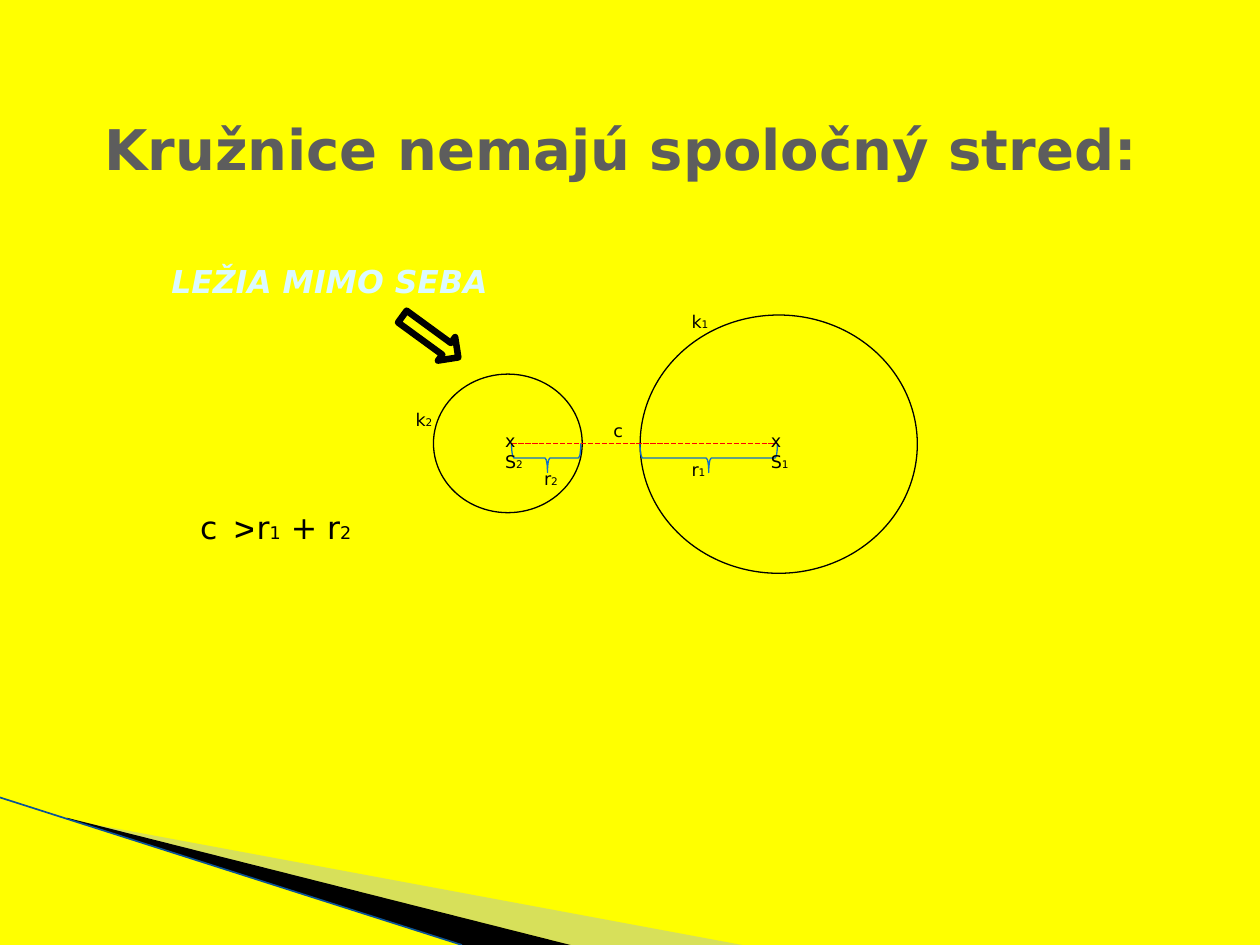
"""Build a slide about two circles lying outside each other."""
from dataclasses import dataclass

from lxml import etree
from pptx import Presentation
from pptx.dml.color import RGBColor
from pptx.enum.dml import MSO_LINE
from pptx.enum.shapes import MSO_CONNECTOR, MSO_SHAPE
from pptx.enum.text import MSO_AUTO_SIZE, PP_ALIGN
from pptx.oxml.ns import qn
from pptx.util import Pt

OVAL, BRACE, ARROW = MSO_SHAPE.OVAL, MSO_SHAPE.LEFT_BRACE, MSO_SHAPE.RIGHT_ARROW
STRAIGHT, DASH = MSO_CONNECTOR.STRAIGHT, MSO_LINE.SQUARE_DOT
FIT, LEFT, CENTER = MSO_AUTO_SIZE.SHAPE_TO_FIT_TEXT, PP_ALIGN.LEFT, PP_ALIGN.CENTER


@dataclass(frozen=True)
class Theme:
    font: str = "DejaVu Sans"
    background: str = "FFFF00"
    ink: str = "000000"
    title: str = "5D5D5D"
    heading: str = "DCFAFF"
    brace: str = "0F6FC6"
    distance: str = "FF0000"
    wedge: str = "9DB2E1"
    edge: str = "0B5395"
    title_size: float = 32
    body_size: float = 18
    body_sub: float = 10
    label_size: float = 10
    label_sub: float = 6


THEME = Theme()


@dataclass(frozen=True)
class Box:
    left: float
    top: float
    width: float
    height: float

    def emu(self) -> list:
        return [Pt(v) for v in (self.left, self.top, self.width, self.height)]


@dataclass(frozen=True)
class Label:
    """Text whose lines alternate normal and subscript pieces."""
    box: Box
    lines: tuple
    size: float = THEME.label_size
    sub_size: float = THEME.label_sub
    color: str = THEME.ink
    bold: bool = False
    italic: bool = False
    wrap: bool = True
    align: PP_ALIGN = LEFT
    rotation: float = 0
    tab: float = 0


@dataclass(frozen=True)
class Figure:
    kind: MSO_SHAPE
    box: Box
    color: str = THEME.ink
    weight: float = 0.75
    rotation: float = 0
    fill: str = ""
    tip: float = 0


@dataclass(frozen=True)
class Wedge:
    points: tuple
    fill: str
    opacity: int = 100


@dataclass(frozen=True)
class Segment:
    start: tuple
    end: tuple
    color: str
    weight: float
    dashed: bool = False


WEDGES = (
    Wedge(((39.6, 468.5), (424, 540), (326, 540), (39.6, 468)), THEME.wedge, 40),
    Wedge(((38.2, 467.3), (326, 540), (264, 540), (38.9, 468)), THEME.ink),
)
EDGE = Segment((0, 455.7), (264, 540), THEME.edge, 0.95)
DISTANCE = Segment((292.3, 253.4), (444.2, 253.4), THEME.distance, 1, True)

FIGURES = (
    Figure(OVAL, Box(247.7, 213.8, 85, 79.2)),
    Figure(OVAL, Box(365.8, 180, 158.4, 147.6)),
    Figure(ARROW, Box(226.1, 184.3, 39.6, 16.6), weight=3.75, rotation=36.1,
           fill=THEME.background),
    Figure(BRACE, Box(303.8, 241.9, 16.6, 39.6), THEME.brace, rotation=270, tip=0.519),
    Figure(BRACE, Box(396.7, 222.5, 16.6, 78.5), THEME.brace, rotation=270, tip=0.5),
)

LABELS = (
    Label(Box(50.4, 61.9, 609.1, 46.1), (("Kružnice nemajú spoločný stred:",),),
          THEME.title_size, color=THEME.title, bold=True, wrap=False, align=CENTER),
    Label(Box(87.8, 146.2, 200.9, 28.8), (("LEŽIA MIMO SEBA",),), THEME.body_size,
          color=THEME.heading, bold=True, italic=True, wrap=False, align=CENTER),
    Label(Box(433.4, 241.9, 33.8, 31.7), (("x",), ("S", "1"))),
    Label(Box(281.5, 241.9, 28.1, 31.7), (("x",), ("S", "2"))),
    Label(Box(343.4, 236.2, 50.4, 19.4), (("c",),)),
    Label(Box(388.1, 258.5, 28.1, 19.4), (("r", "1"),)),
    Label(Box(303.8, 264.2, 44.6, 19.4), (("r", "2"),)),
    Label(Box(388.1, 174.2, 50.4, 19.4), (("k", "1"),)),
    Label(Box(230.4, 230.4, 50.4, 19.4), (("k", "2"),)),
    Label(Box(107.2, 286.6, 162.8, 28.8), (("c\tr", "1", " + r", "2"),),
          THEME.body_size, THEME.body_sub, tab=32.4),
    Label(Box(78.5, 241.9, 118.1, 28.8), (("v",),), THEME.body_size, rotation=270),
)


def rgb(color: str) -> RGBColor:
    return RGBColor.from_string(color)


def draw_wedge(s, wedge: Wedge) -> None:
    start, *rest = [(Pt(x), Pt(y)) for x, y in wedge.points]
    builder = s.shapes.build_freeform(*start)
    builder.add_line_segments(rest)
    sp = builder.convert_to_shape()
    sp.shadow.inherit = False
    sp.fill.solid()
    sp.fill.fore_color.rgb = rgb(wedge.fill)
    sp.line.fill.background()
    if wedge.opacity < 100:
        color = sp.fill._xPr.find(qn("a:solidFill"))[0]
        etree.SubElement(color, qn("a:alpha"), val=str(wedge.opacity * 1000))


def draw_segment(s, segment: Segment) -> None:
    ends = [Pt(v) for v in segment.start + segment.end]
    line = s.shapes.add_connector(STRAIGHT, *ends)
    line.line.color.rgb = rgb(segment.color)
    line.line.width = Pt(segment.weight)
    if segment.dashed:
        line.line.dash_style = DASH
    etree.SubElement(line._element.spPr, qn("a:effectLst"))


def draw_figure(s, figure: Figure) -> None:
    sp = s.shapes.add_shape(figure.kind, *figure.box.emu())
    sp.shadow.inherit = False
    sp.rotation = figure.rotation
    if figure.fill:
        sp.fill.solid()
        sp.fill.fore_color.rgb = rgb(figure.fill)
    else:
        sp.fill.background()
    sp.line.color.rgb = rgb(figure.color)
    sp.line.width = Pt(figure.weight)
    if figure.tip:
        sp.adjustments[1] = figure.tip


def draw_label(s, label: Label) -> None:
    sp = s.shapes.add_textbox(*label.box.emu())
    sp.rotation = label.rotation
    tf = sp.text_frame
    tf.word_wrap = label.wrap
    tf.auto_size = FIT
    for row, pieces in enumerate(label.lines):
        p = tf.add_paragraph() if row else tf.paragraphs[0]
        p.alignment = label.align
        if label.tab:
            tabs = etree.SubElement(p._p.get_or_add_pPr(), qn("a:tabLst"))
            etree.SubElement(tabs, qn("a:tab"), pos=str(Pt(label.tab)), algn="l")
        for index, piece in enumerate(pieces):
            r = p.add_run()
            r.text = piece
            r.font.name = THEME.font
            r.font.size = Pt(label.sub_size if index % 2 else label.size)
            r.font.bold, r.font.italic = label.bold, label.italic
            r.font.color.rgb = rgb(label.color)


def main() -> None:
    prs = Presentation()
    prs.slide_width, prs.slide_height = Pt(720), Pt(540)
    s = prs.slides.add_slide(prs.slide_layouts[6])
    s.background.fill.solid()
    s.background.fill.fore_color.rgb = rgb(THEME.background)
    for wedge in WEDGES:
        draw_wedge(s, wedge)
    draw_segment(s, EDGE)
    for figure in FIGURES:
        draw_figure(s, figure)
    draw_segment(s, DISTANCE)
    for label in LABELS:
        draw_label(s, label)
    prs.save("out.pptx")


if __name__ == "__main__":
    main()
